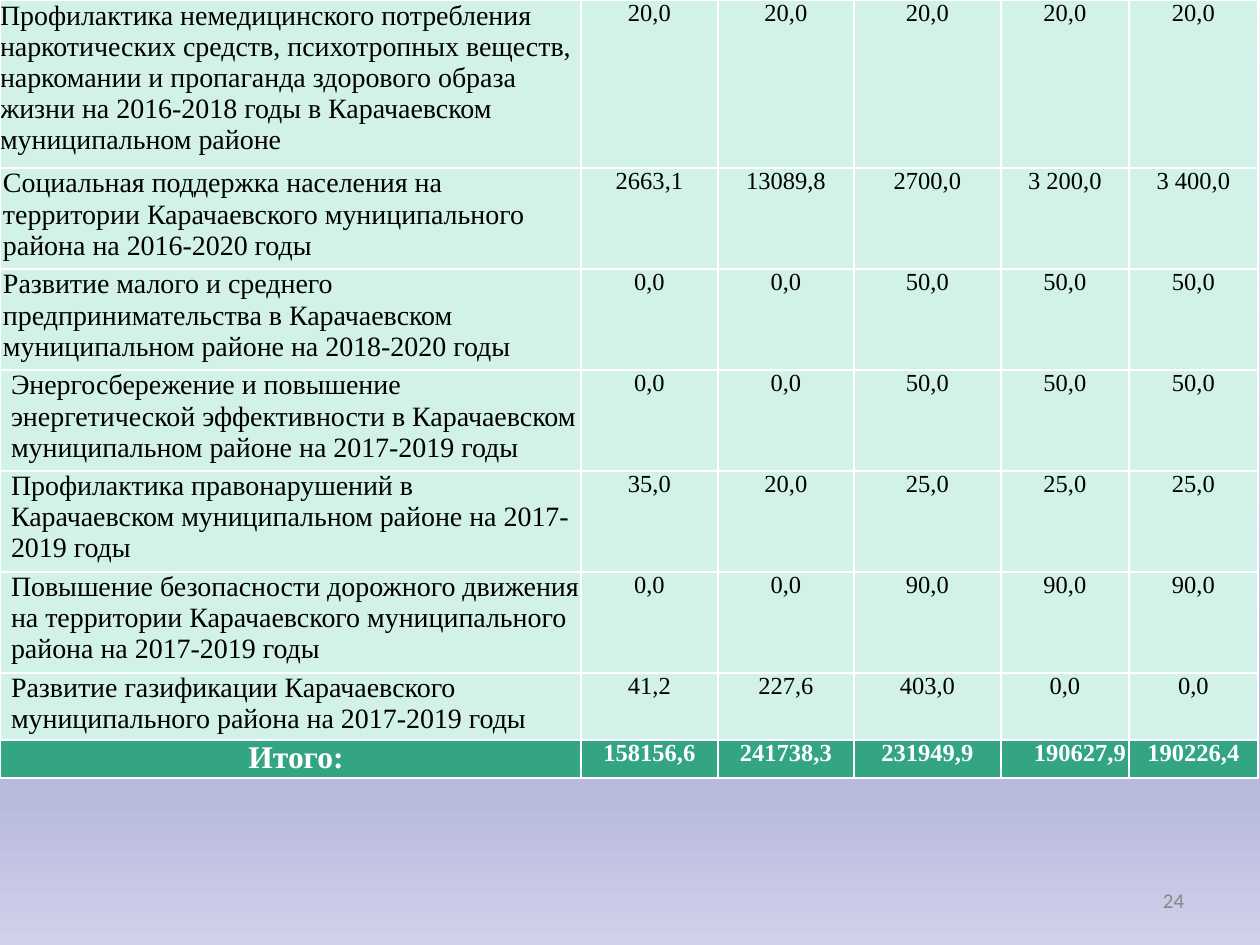
from copy import deepcopy
from lxml import etree
from pptx import Presentation
from pptx.dml.color import RGBColor
from pptx.enum.text import PP_ALIGN
from pptx.oxml.ns import qn
from pptx.util import Pt

LEFT, CENTER = PP_ALIGN.LEFT, PP_ALIGN.CENTER
SERIF = "Times New Roman"
MINT, GREEN, WHITE, BLACK, GRAY = "D2F1E8", "33A583", "FFFFFF", "000000", "888888"
STOPS = [(0, "F7F7FB"), (0.74, "B7B9DD"), (0.83, "B7B9DD"), (1, "CFD0E9")]
COLS = [581, 137, 136, 147, 128, 129]
ROWS = [
    (168, 0, "Профилактика немедицинского потребления наркотических средств, психотропных веществ, "
     "наркомании и пропаганда здорового образа жизни на 2016-2018 годы в Карачаевском муниципальном районе",
     ["20,0", "20,0", "20,0", "20,0", "20,0"]),
    (101, 3, "Социальная поддержка населения на территории Карачаевского муниципального района на 2016-2020 годы",
     ["2663,1", "13089,8", "2700,0", "3 200,0", "3 400,0"]),
    (101, 3, "Развитие малого и среднего предпринимательства в Карачаевском муниципальном районе на 2018-2020 годы",
     ["0,0", "0,0", "50,0", "50,0", "50,0"]),
    (100, 11, "Энергосбережение и повышение энергетической эффективности в Карачаевском муниципальном районе "
     "на 2017-2019 годы",
     ["0,0", "0,0", "50,0", "50,0", "50,0"]),
    (101, 11, "Профилактика правонарушений в Карачаевском муниципальном районе на 2017-2019 годы",
     ["35,0", "20,0", "25,0", "25,0", "25,0"]),
    (101, 11, "Повышение безопасности дорожного движения на территории Карачаевского муниципального района "
     "на 2017-2019 годы",
     ["0,0", "0,0", "90,0", "90,0", "90,0"]),
    (67, 11, "Развитие газификации Карачаевского муниципального района на 2017-2019 годы",
     ["41,2", "227,6", "403,0", "0,0", "0,0"]),
    (38, 11, "Итого:", ["158156,6", "241738,3", "231949,9", "190627,9", "190226,4"]),
]
TOTAL, SHIFTED = len(ROWS) - 1, 4


def px(n):
    return round(n * 914400 / 126)


def rgb(code):
    return RGBColor.from_string(code)


def write(frame, text, size, color, face=SERIF, bold=False, align=LEFT, indent=0):
    frame.text = text
    para = frame.paragraphs[0]
    para.alignment = align
    props = para._p.get_or_add_pPr()
    props.set("marL", str(px(indent)))
    props.set("indent", "0")
    font = para.runs[0].font
    font.size, font.name, font.bold = Pt(size), face, bold
    font.color.rgb = rgb(color)


def border(cell):
    props = cell._tc.get_or_add_tcPr()
    for at, side in enumerate(("lnL", "lnR", "lnT", "lnB")):
        line = etree.Element(qn("a:" + side), w=str(Pt(1)))
        fill = etree.SubElement(line, qn("a:solidFill"))
        etree.SubElement(fill, qn("a:srgbClr"), val=WHITE)
        props.insert(at, line)


def paint(slide):
    fill = slide.background.fill
    fill.gradient()
    fill.gradient_angle = 270
    stops = next(slide._element.iter(qn("a:gsLst")))
    while len(stops) < len(STOPS):
        stops.append(deepcopy(stops[0]))
    for stop, (place, color) in zip(fill.gradient_stops, STOPS):
        stop.position = place
        stop.color.rgb = rgb(color)


def add_budget(slide):
    high = sum(row[0] for row in ROWS)
    table = slide.shapes.add_table(len(ROWS), len(COLS), 0, 0, px(sum(COLS)), px(high)).table
    table.first_row = table.horz_banding = False
    for col, width in zip(table.columns, COLS):
        col.width = px(width)
    for r, (height, indent, name, sums) in enumerate(ROWS):
        table.rows[r].height = px(height)
        last = r == TOTAL
        for c, text in enumerate([name] + sums):
            cell = table.cell(r, c)
            cell.margin_left = cell.margin_right = cell.margin_top = cell.margin_bottom = 0
            cell.fill.solid()
            cell.fill.fore_color.rgb = rgb(GREEN if last else MINT)
            border(cell)
            size = 14 if c else 18 if last else 16
            shift = indent if c == 0 else 30 if last and c == SHIFTED else 0
            write(cell.text_frame, text, size, WHITE if last else BLACK, bold=last,
                  align=CENTER if c or last else LEFT, indent=shift)


def add_number(slide):
    frame = slide.shapes.add_textbox(px(1096), px(878), px(129), px(42)).text_frame
    frame.word_wrap = True
    frame.margin_left = frame.margin_right = frame.margin_bottom = 0
    frame.margin_top = px(10)
    write(frame, "24", 12, GRAY, face="Calibri", indent=67)


def main():
    deck = Presentation()
    deck.slide_width, deck.slide_height = px(1260), px(945)
    slide = deck.slides.add_slide(deck.slide_layouts[6])
    paint(slide)
    add_number(slide)
    add_budget(slide)
    deck.save("out.pptx")


if __name__ == "__main__":
    main()
